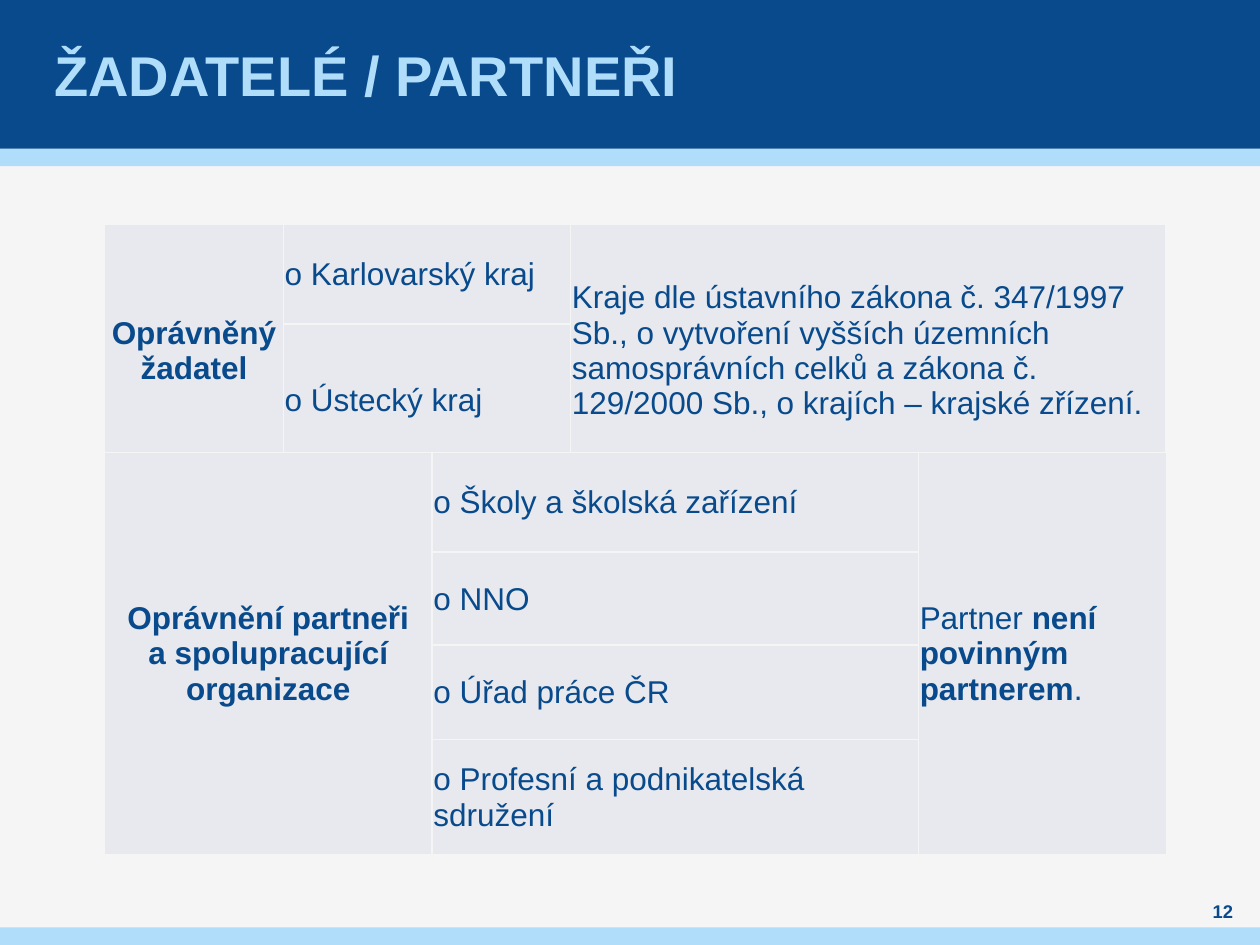
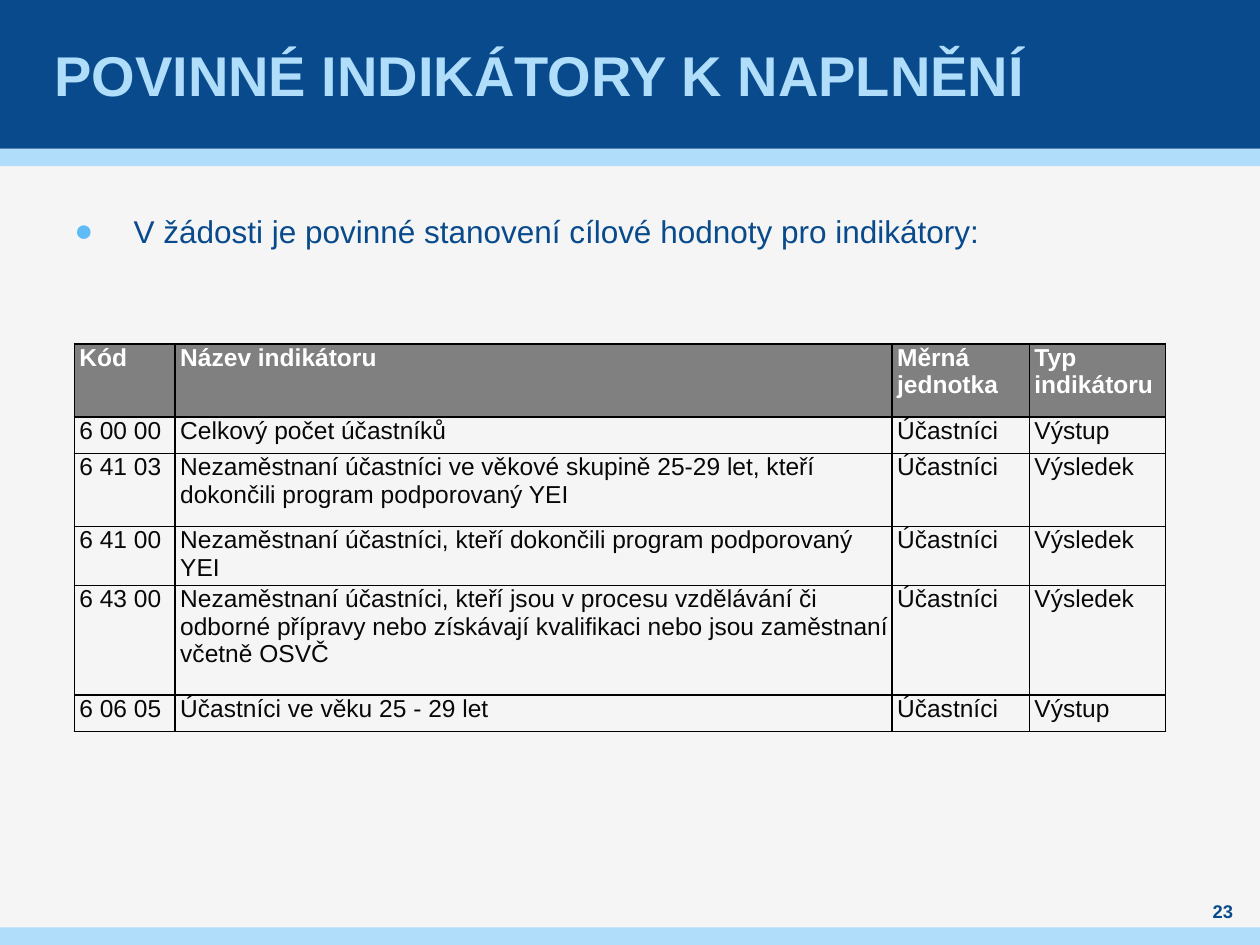
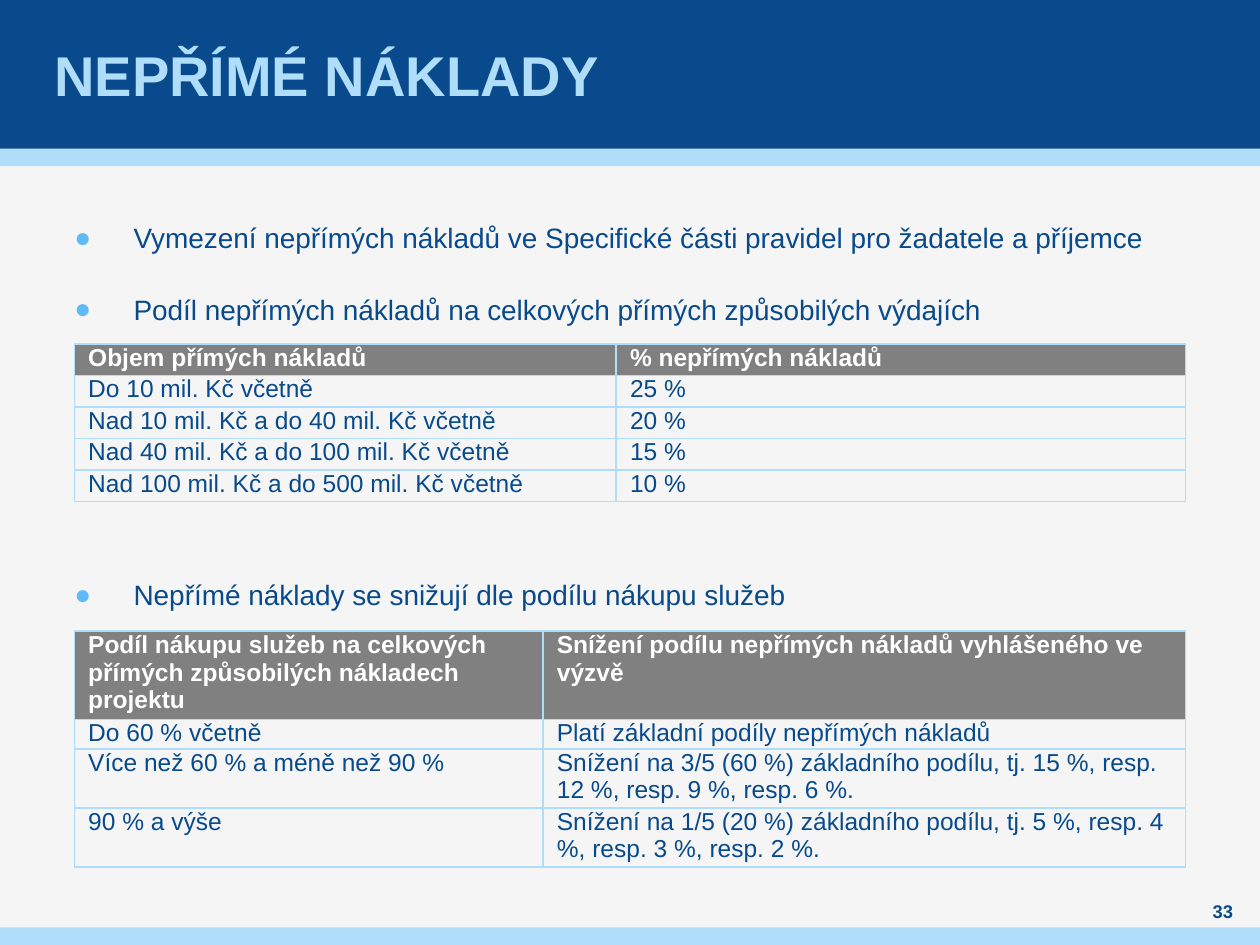
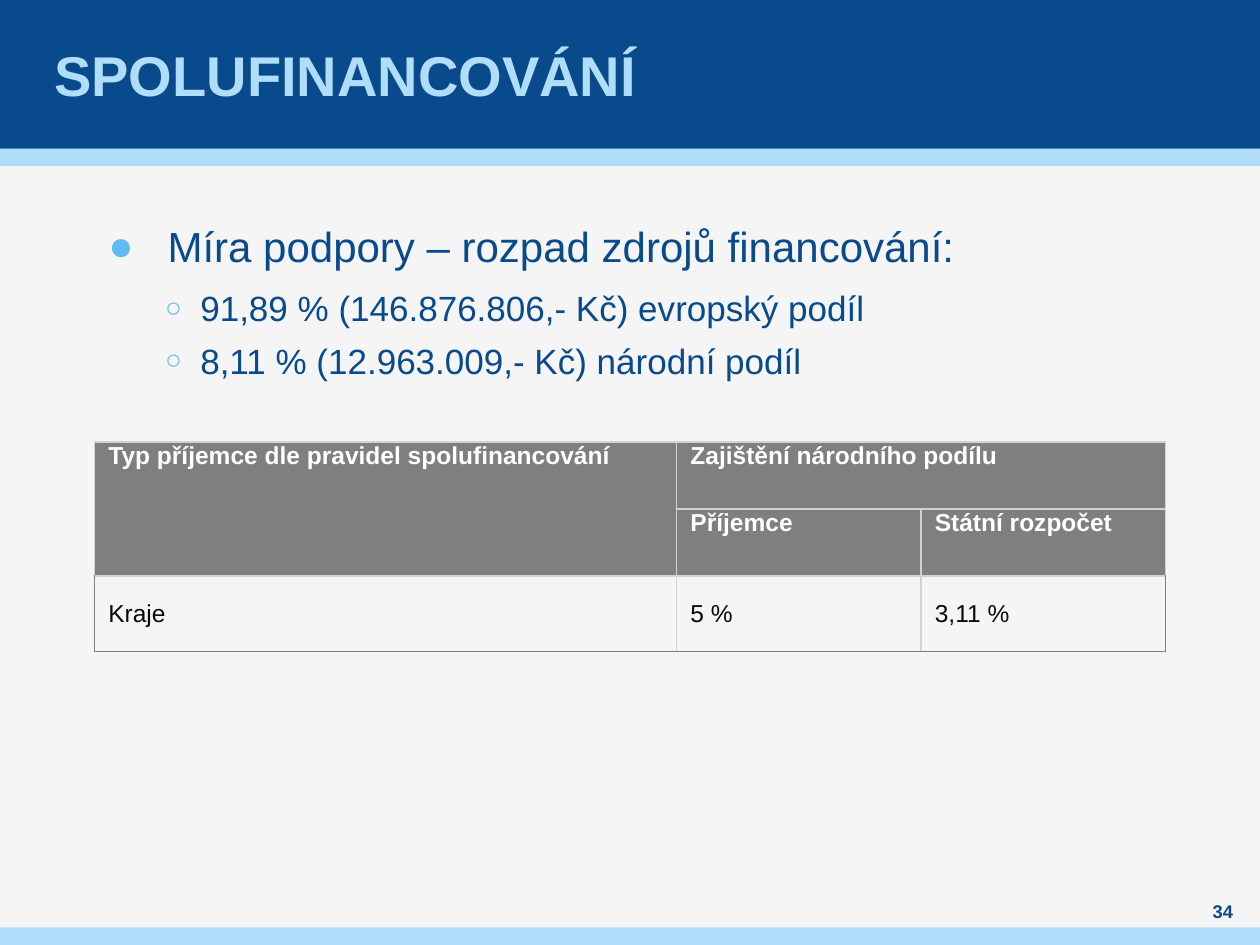
from dataclasses import dataclass

from lxml.etree import SubElement
from pptx import Presentation
from pptx.dml.color import RGBColor
from pptx.enum.shapes import MSO_SHAPE
from pptx.enum.text import MSO_ANCHOR, MSO_AUTO_SIZE, PP_ALIGN
from pptx.oxml import parse_xml
from pptx.oxml.ns import nsdecls, qn
from pptx.util import Inches, Pt

FONT = "Arial"
NAVY = "084A8B"
SKY = "AFDDFA"
BULLET = "5FBBF5"
BACKGROUND = "F5F5F5"
CELL_GREY = "E7E9EE"
HEADER_GREY = "808080"
SILVER = "D2D2D2"
INK = "080808"
WHITE = "FFFFFF"
BLACK = "000000"

TITLE_ONLY, TITLE_AND_BODY = 5, 1
PLAIN_TABLE_STYLE = "{2D5ABB26-0587-4C30-8999-92F81FD0307C}"
BORDER_SIDES = ("lnL", "lnR", "lnT", "lnB")


@dataclass
class TableStyle:
    border: str
    text_colour: str = NAVY
    fill: str = None
    header_fill: str = HEADER_GREY
    header_rows: int = 1
    size: int = 14
    side_margin: float = 0.07
    top_margin: float = 0
    indent: float = 0.04
    spacing: int = 3
    anchor: MSO_ANCHOR = MSO_ANCHOR.TOP


@dataclass
class BulletStyle:
    size: int
    line_spacing: object
    spacing: int = 6
    level: int = 0
    left: float = 0.47
    hanging: float = 0.47
    symbol: str = "●"
    percent: int = 100


def rgb(colour):
    return RGBColor.from_string(colour)


def set_font(paragraph, size, colour, bold=False):
    font = paragraph.font
    font.name = FONT
    font.size = Pt(size)
    font.bold = bold
    font.color.rgb = rgb(colour)


def set_margins(target, left, top, right, bottom):
    target.margin_left = Inches(left)
    target.margin_top = Inches(top)
    target.margin_right = Inches(right)
    target.margin_bottom = Inches(bottom)


def place(shape, left, top, width, height):
    shape.left, shape.top = Inches(left), Inches(top)
    shape.width, shape.height = Inches(width), Inches(height)


def set_up_master(presentation):
    """Give the master its background and its three bands."""
    master = presentation.slide_master
    background = master.background.fill
    background.solid()
    background.fore_color.rgb = rgb(BACKGROUND)
    # Masters offer no add_shape, so the bands are made on a slide and moved.
    slide = presentation.slides[0]
    bands = [(1.18, 0.14, SKY), (0, 1.18, NAVY), (7.36, 0.14, SKY)]
    for index, (top, height, colour) in enumerate(bands):
        band = slide.shapes.add_shape(
            MSO_SHAPE.RECTANGLE, 0, Inches(top), Inches(10), Inches(height))
        band.shadow.inherit = False
        band.fill.solid()
        band.fill.fore_color.rgb = rgb(colour)
        band.line.fill.background()
        band._element.nvSpPr.cNvPr.id = 20 + index
        master.shapes._spTree.insert(2 + index, band._element)


def add_slide(presentation, layout, title, number):
    slide = presentation.slides.add_slide(presentation.slide_layouts[layout])
    place(slide.shapes.title, 0.39, 0, 9.21, 1.18)
    frame = slide.shapes.title.text_frame
    frame.text = title
    frame.auto_size = MSO_AUTO_SIZE.NONE
    frame.vertical_anchor = MSO_ANCHOR.MIDDLE
    set_margins(frame, 0.04, 0, 0.04, 0)
    frame.paragraphs[0].alignment = PP_ALIGN.LEFT
    set_font(frame.paragraphs[0], 32, SKY, bold=True)
    add_page_number(slide, number)
    return slide


def add_page_number(slide, number):
    box = slide.shapes.add_textbox(
        Inches(9.45), Inches(7.13), Inches(0.51), Inches(0.2))
    frame = box.text_frame
    frame.word_wrap = True
    frame.vertical_anchor = MSO_ANCHOR.MIDDLE
    set_margins(frame, 0, 0, 0, 0)
    frame.text = str(number)
    frame.paragraphs[0].alignment = PP_ALIGN.CENTER
    set_font(frame.paragraphs[0], 10.5, NAVY, bold=True)


def add_bullets(slide, position, items, margins=(0, 0, 0, 0)):
    """Fill the body placeholder with (text, BulletStyle) items."""
    body = slide.placeholders[1]
    place(body, *position)
    frame = body.text_frame
    frame.auto_size = MSO_AUTO_SIZE.NONE
    set_margins(frame, *margins)
    for index, (text, style) in enumerate(items):
        paragraph = frame.add_paragraph() if index else frame.paragraphs[0]
        paragraph.text = text
        paragraph.level = style.level
        paragraph.line_spacing = style.line_spacing
        paragraph.space_before = paragraph.space_after = Pt(style.spacing)
        set_bullet(paragraph, style)
        set_font(paragraph, style.size, NAVY)
    return frame.paragraphs


def set_bullet(paragraph, style):
    properties = paragraph._p.get_or_add_pPr()
    properties.set("marL", str(Inches(style.left)))
    properties.set("indent", str(-Inches(style.hanging)))
    colour = SubElement(properties, qn("a:buClr"))
    SubElement(colour, qn("a:srgbClr"), val=BULLET)
    SubElement(properties, qn("a:buSzPct"), val=str(style.percent * 1000))
    SubElement(properties, qn("a:buFont"), typeface=FONT)
    SubElement(properties, qn("a:buChar"), char=style.symbol)


def set_border(cell, side, colour):
    properties = cell._tc.get_or_add_tcPr()
    for line in properties.findall(qn(f"a:{side}")):
        properties.remove(line)
    line = parse_xml(
        f'<a:{side} {nsdecls("a")} w="{Pt(1)}"><a:solidFill>'
        f'<a:srgbClr val="{colour}"/></a:solidFill></a:{side}>')
    properties.insert(BORDER_SIDES.index(side), line)


def write_runs(paragraph, text):
    """Write text in which ** switches bold on and off."""
    first, *others = text.split("**")
    paragraph.text = first
    for index, piece in enumerate(others):
        run = paragraph.add_run()
        run.text = piece
        run.font.bold = index % 2 == 0


def format_cell(cell, text, style, is_header):
    set_margins(cell, style.side_margin, style.top_margin, style.side_margin, 0)
    cell.vertical_anchor = style.anchor
    fill = style.header_fill if is_header else style.fill
    if fill:
        cell.fill.solid()
        cell.fill.fore_color.rgb = rgb(fill)
    else:
        cell.fill.background()
    for side in BORDER_SIDES:
        set_border(cell, side, style.border)
    paragraph = cell.text_frame.paragraphs[0]
    if text:
        write_runs(paragraph, text)
    paragraph._p.get_or_add_pPr().set("marL", str(Inches(style.indent)))
    paragraph.space_before = paragraph.space_after = Pt(style.spacing)
    set_font(paragraph, style.size, WHITE if is_header else style.text_colour, is_header)


def add_table(slide, left, top, columns, rows, contents, style, merges=()):
    """Add a table; merges holds (first cell, last cell) pairs of (row, column)."""
    frame = slide.shapes.add_table(
        len(rows), len(columns), Inches(left), Inches(top),
        Inches(sum(columns)), Inches(sum(rows)))
    table = frame.table
    table.first_row = table.horz_banding = False
    table._tbl.tblPr.find(qn("a:tableStyleId")).text = PLAIN_TABLE_STYLE
    for column, width in zip(table.columns, columns):
        column.width = Inches(width)
    for row, height in zip(table.rows, rows):
        row.height = Inches(height)
    for row_index, texts in enumerate(contents):
        for column_index, text in enumerate(texts):
            format_cell(table.cell(row_index, column_index), text, style,
                        row_index < style.header_rows)
    for first, last in merges:
        table.cell(*first).merge(table.cell(*last))
    return table


def add_applicants_slide(presentation):
    slide = add_slide(presentation, TITLE_ONLY, "ŽADATELÉ / PARTNEŘI", 12)
    style = TableStyle(
        border=BACKGROUND, fill=CELL_GREY, header_rows=0, size=18, side_margin=0.01,
        top_margin=0.01, indent=0, spacing=0, anchor=MSO_ANCHOR.MIDDLE)
    applicants = add_table(
        slide, 0.83, 1.78, [1.42, 2.28, 4.72], [0.79, 1.02],
        [["Oprávněný žadatel", "o Karlovarský kraj",
          "Kraje dle ústavního zákona č. 347/1997 Sb., o vytvoření vyšších územních "
          "samosprávních celků a zákona č. 129/2000 Sb., o krajích – krajské zřízení."],
         [None, "o Ústecký kraj", None]],
        style, merges=[((0, 0), (1, 0)), ((0, 2), (1, 2))])
    partners = add_table(
        slide, 0.83, 3.59, [2.6, 3.86, 1.97], [0.79, 0.74, 0.75, 0.85],
        [["Oprávnění partneři\na spolupracující organizace",
          "o Školy a školská zařízení", "Partner **není povinným partnerem**."],
         [None, "o NNO", None],
         [None, "o Úřad práce ČR", None],
         [None, "o Profesní a podnikatelská sdružení", None]],
        style, merges=[((0, 0), (3, 0)), ((0, 2), (3, 2))])
    for table in (applicants, partners):
        label = table.cell(0, 0).text_frame.paragraphs[0]
        label.alignment = PP_ALIGN.CENTER
        label.font.bold = True


def add_indicators_slide(presentation):
    slide = add_slide(presentation, TITLE_AND_BODY, "POVINNÉ INDIKÁTORY K NAPLNĚNÍ", 23)
    add_bullets(slide, (0.59, 1.62, 8.82, 5.04), [
        ("V žádosti je povinné stanovení cílové hodnoty pro indikátory:",
         BulletStyle(18, 1.2))])
    indicators = [
        ("6 00 00", "Celkový počet účastníků", "Výstup"),
        ("6 41 03", "Nezaměstnaní účastníci ve věkové skupině 25-29 let, kteří "
                    "dokončili program podporovaný YEI", "Výsledek"),
        ("6 41 00", "Nezaměstnaní účastníci, kteří dokončili program podporovaný YEI",
         "Výsledek"),
        ("6 43 00", "Nezaměstnaní účastníci, kteří jsou v procesu vzdělávání či odborné "
                    "přípravy nebo získávají kvalifikaci nebo jsou zaměstnaní včetně OSVČ",
         "Výsledek"),
        ("6 06 05", "Účastníci ve věku 25 - 29 let", "Výstup"),
    ]
    header = ["Kód", "Název indikátoru", "Měrná jednotka", "Typ indikátoru"]
    add_table(
        slide, 0.59, 2.73, [0.8, 5.69, 1.09, 1.08], [0.58, 0.29, 0.58, 0.44, 0.87, 0.29],
        [header] + [[code, name, "Účastníci", kind] for code, name, kind in indicators],
        TableStyle(border=BLACK, text_colour=INK, side_margin=0))


def add_indirect_costs_slide(presentation):
    slide = add_slide(presentation, TITLE_AND_BODY, "NEPŘÍMÉ NÁKLADY", 33)
    bullet = BulletStyle(16, Pt(28.8))
    paragraphs = add_bullets(slide, (0.59, 1.62, 8.82, 0.63), [
        ("Vymezení nepřímých nákladů ve Specifické části pravidel pro žadatele a příjemce",
         bullet),
        ("Podíl nepřímých nákladů na celkových přímých způsobilých výdajích", bullet),
        ("Nepřímé náklady se snižují dle podílu nákupu služeb", bullet)])
    paragraphs[-1].space_before = Pt(128.4)  # room for the first table
    style = TableStyle(border=SKY)
    add_table(
        slide, 0.59, 2.73, [4.3, 4.52], [0.25] * 5,
        [["Objem přímých nákladů", "% nepřímých nákladů"],
         ["Do 10 mil. Kč včetně", "25 %"],
         ["Nad 10 mil. Kč a do 40 mil. Kč včetně", "20 %"],
         ["Nad 40 mil. Kč a do 100 mil. Kč včetně", "15 %"],
         ["Nad 100 mil. Kč a do 500 mil. Kč včetně", "10 %"]],
        style)
    add_table(
        slide, 0.59, 5.01, [3.72, 5.1], [0.66, 0.22, 0.44, 0.44],
        [["Podíl nákupu služeb na celkových přímých způsobilých nákladech projektu",
          "Snížení podílu nepřímých nákladů vyhlášeného ve výzvě"],
         ["Do 60 % včetně", "Platí základní podíly nepřímých nákladů"],
         ["Více než 60 % a méně než 90 %",
          "Snížení na 3/5 (60 %) základního podílu, tj. 15 %, resp. 12 %, "
          "resp. 9 %, resp. 6 %."],
         ["90 % a výše",
          "Snížení na 1/5 (20 %) základního podílu, tj. 5 %, resp. 4 %, "
          "resp. 3 %, resp. 2 %."]],
        style)


def add_cofinancing_slide(presentation):
    slide = add_slide(presentation, TITLE_AND_BODY, "SPOLUFINANCOVÁNÍ", 34)
    share = BulletStyle(20, Pt(24), spacing=3, level=1, left=0.73, hanging=0.28,
                        symbol="○", percent=80)
    add_bullets(slide, (0.76, 1.7, 8.5, 1.39), [
        ("Míra podpory – rozpad zdrojů financování:", BulletStyle(24, Pt(28.8))),
        ("91,89 % (146.876.806,- Kč) evropský podíl", share),
        ("8,11 % (12.963.009,- Kč) národní podíl", share)],
        margins=(0.1, 0.05, 0.1, 0.05))
    outline = "7F7F7F"
    table = add_table(
        slide, 0.75, 3.51, [4.62, 1.94, 1.94], [0.53, 0.53, 0.6],
        [["Typ příjemce dle pravidel spolufinancování", "Zajištění národního podílu", None],
         [None, "Příjemce", "Státní rozpočet"],
         ["Kraje", "5 %", "3,11 %"]],
        TableStyle(border=SILVER, text_colour=INK, header_fill=outline, header_rows=2),
        merges=[((0, 0), (1, 0)), ((0, 1), (0, 2))])
    region_cells = [table.cell(2, column) for column in range(3)]
    for cell in region_cells:
        cell.vertical_anchor = MSO_ANCHOR.MIDDLE
        cell.text_frame.paragraphs[0].space_after = Pt(0)
        set_border(cell, "lnB", outline)
    set_border(region_cells[0], "lnL", outline)
    set_border(region_cells[-1], "lnR", outline)


def main():
    presentation = Presentation()
    presentation.slide_width, presentation.slide_height = Inches(10), Inches(7.5)
    add_applicants_slide(presentation)
    add_indicators_slide(presentation)
    add_indirect_costs_slide(presentation)
    add_cofinancing_slide(presentation)
    set_up_master(presentation)
    presentation.save("out.pptx")


if __name__ == "__main__":
    main()
